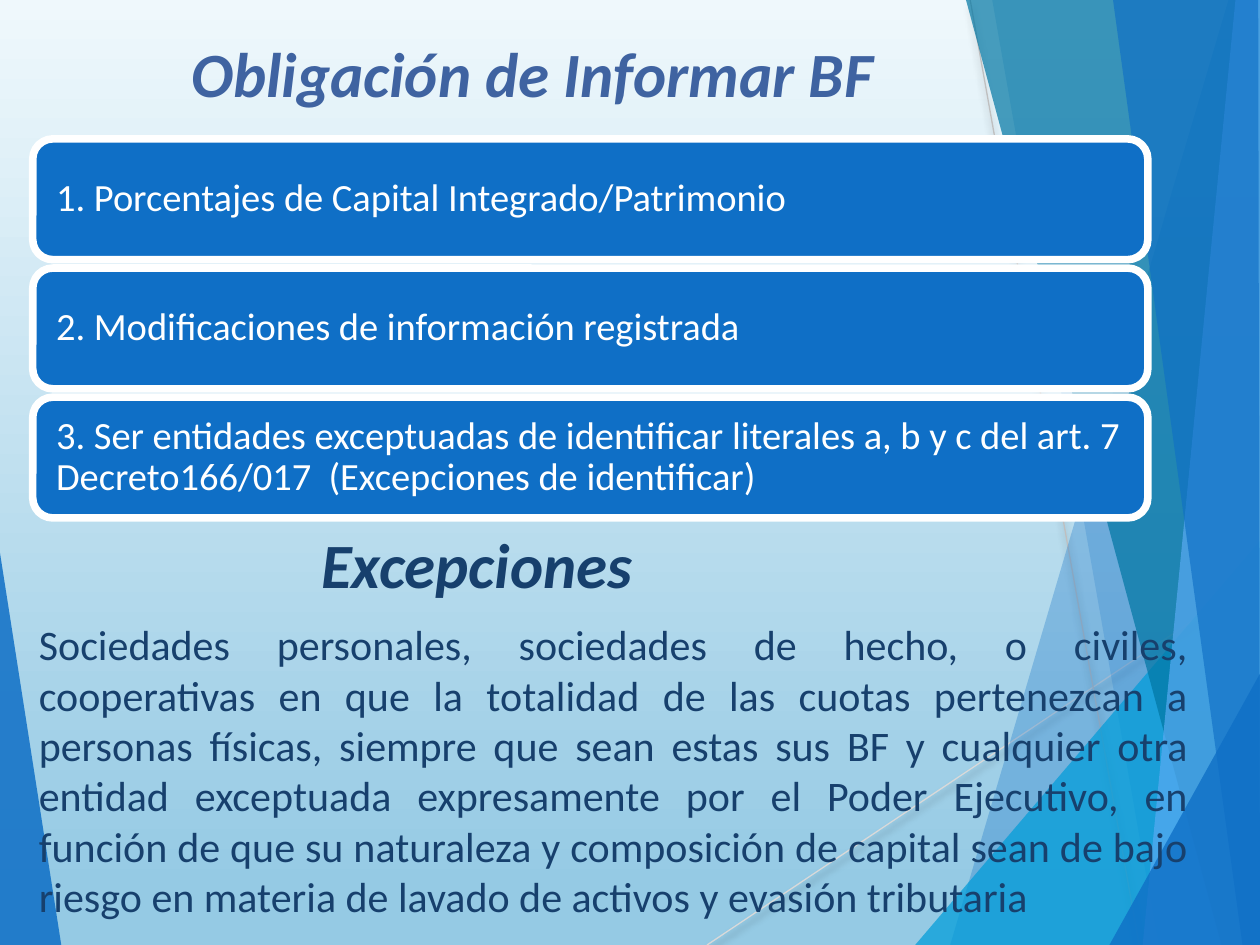
import pptx
import pptx.dml.color
import pptx.enum.shapes
import pptx.enum.text
import pptx.oxml
import pptx.oxml.ns
import pptx.util

Pt = pptx.util.Pt
RGBColor = pptx.dml.color.RGBColor
Align = pptx.enum.text.PP_ALIGN
Anchor = pptx.enum.text.MSO_ANCHOR

WIDTH, HEIGHT = 720, 540
SKY_TOP = RGBColor(0xEF, 0xF8, 0xFC)
SKY_BOTTOM = RGBColor(0x95, 0xCA, 0xE4)
BLUE = RGBColor(0x0F, 0x6F, 0xC6)
CYAN = RGBColor(0x00, 0x9D, 0xD9)
TEAL = RGBColor(0x00, 0x76, 0xA3)
LIGHT_BLUE = RGBColor(0x59, 0xAA, 0xF2)
LIGHT_GREY = RGBColor(0xD9, 0xD9, 0xD9)
GREY = RGBColor(0xBF, 0xBF, 0xBF)
WHITE = RGBColor(0xFF, 0xFF, 0xFF)
TITLE_BLUE = RGBColor(0x3F, 0x63, 0xA1)
NAVY = RGBColor(0x17, 0x40, 0x6D)

FACETS = [
    ([(0, 316), (35, HEIGHT), (0, HEIGHT)], BLUE, 85),
    ([(702, 0), (543, HEIGHT), (WIDTH, HEIGHT), (WIDTH, 0)], BLUE, 30),
    ([(567, 0), (662, HEIGHT), (WIDTH, HEIGHT), (WIDTH, 0)], BLUE, 20),
    ([(523, HEIGHT), (WIDTH, 309), (WIDTH, HEIGHT)], CYAN, 72),
    ([(552, 0), (698, HEIGHT), (WIDTH, HEIGHT), (WIDTH, 0)], TEAL, 70),
    ([(706, 0), (653, HEIGHT), (WIDTH, HEIGHT), (WIDTH, 0)], LIGHT_BLUE, 70),
    ([(636, 0), (710, HEIGHT), (WIDTH, HEIGHT), (719, 0)], BLUE, 65),
    ([(634, HEIGHT), (WIDTH, 385), (WIDTH, HEIGHT)], BLUE, 80),
]
RAYS = [((404, HEIGHT), (WIDTH, 329), LIGHT_GREY), ((554.4, 0), (651, HEIGHT), GREY)]
OBLIGATIONS = [
    "1. Porcentajes de Capital Integrado/Patrimonio",
    "2. Modificaciones de información registrada",
    "3. Ser entidades exceptuadas de identificar literales a, b y c del art. 7 "
    "Decreto166/017  (Excepciones de identificar)",
]
EXCEPTIONS = (
    "Sociedades personales, sociedades de hecho, o civiles, cooperativas en que la "
    "totalidad de las cuotas pertenezcan a personas físicas, siempre que sean estas "
    "sus BF y cualquier otra entidad exceptuada expresamente por el Poder Ejecutivo, "
    "en función de que su naturaleza y composición de capital sean de bajo riesgo en "
    "materia de lavado de activos y evasión tributaria"
)


class SlideBuilder:
    """Hold the text style and the current slide, and add elements measured in points."""

    font = "Calibri"

    def __init__(self, slide):
        self.slide = slide

    def background(self, top, bottom):
        fill = self.slide.background.fill
        fill.gradient()
        fill.gradient_angle = 270
        for stop, color, position in zip(fill.gradient_stops, (top, bottom), (0, 0.94)):
            stop.color.rgb = color
            stop.position = position

    def facet(self, points, color, opacity):
        builder = self.slide.shapes.build_freeform(*points[0], scale=float(Pt(1)))
        builder.add_line_segments(points[1:], close=True)
        shape = builder.convert_to_shape()
        shape.shadow.inherit = False
        shape.fill.solid()
        shape.fill.fore_color.rgb = color
        shape.line.fill.background()
        solid_fill = shape._element.spPr.find(pptx.oxml.ns.qn("a:solidFill"))
        solid_fill[0].append(pptx.oxml.parse_xml(
            f'<a:alpha {pptx.oxml.ns.nsdecls("a")} val="{opacity * 1000}"/>'))

    def ray(self, start, end, color):
        connector = self.slide.shapes.add_connector(
            pptx.enum.shapes.MSO_CONNECTOR.STRAIGHT, *map(Pt, start + end))
        connector.line.color.rgb = color
        connector.line.width = Pt(0.75)
        connector._element.spPr.append(pptx.oxml.parse_xml(
            f'<a:effectLst {pptx.oxml.ns.nsdecls("a")}>'
            f'<a:outerShdw blurRad="{Pt(4)}" dist="{Pt(3)}" dir="5400000" rotWithShape="0">'
            '<a:srgbClr val="000000"><a:alpha val="35000"/></a:srgbClr>'
            '</a:outerShdw></a:effectLst>'))

    def set_text(self, shape, text, size, color, align, emphasis=False):
        text_frame = shape.text_frame
        text_frame.word_wrap = True
        text_frame.text = text
        paragraph = text_frame.paragraphs[0]
        paragraph.alignment = align
        font = paragraph.runs[0].font
        font.name = self.font
        font.size = Pt(size)
        font.color.rgb = color
        font.bold = font.italic = emphasis
        return paragraph

    def card(self, left, top, width, height, text):
        shape = self.slide.shapes.add_shape(
            pptx.enum.shapes.MSO_SHAPE.ROUNDED_RECTANGLE,
            *map(Pt, (left, top, width, height)))
        shape.shadow.inherit = False
        shape.fill.solid()
        shape.fill.fore_color.rgb = BLUE
        shape.line.color.rgb = WHITE
        shape.line.width = Pt(4.33)
        text_frame = shape.text_frame
        text_frame.vertical_anchor = Anchor.MIDDLE
        text_frame.margin_left = text_frame.margin_right = Pt(10)
        self.set_text(shape, text, 22, WHITE, Align.LEFT).line_spacing = 0.9

    def text_box(self, left, top, width, height):
        return self.slide.shapes.add_textbox(*map(Pt, (left, top, width, height)))

    def heading(self, left, top, text, color):
        shape = self.text_box(left, top, 510.5, 51)
        self.set_text(shape, text, 36, color, Align.CENTER, True)

    def body(self, left, top, width, height, indent, text):
        shape = self.text_box(left, top, width, height)
        shape.text_frame.margin_left = Pt(indent)
        self.set_text(shape, text, 24, NAVY, Align.JUSTIFY)


def main():
    presentation = pptx.Presentation()
    presentation.slide_width, presentation.slide_height = Pt(WIDTH), Pt(HEIGHT)
    builder = SlideBuilder(presentation.slides.add_slide(presentation.slide_layouts[6]))
    builder.background(SKY_TOP, SKY_BOTTOM)
    builder.facet(*FACETS[0])
    for ray in RAYS:
        builder.ray(*ray)
    for facet in FACETS[1:]:
        builder.facet(*facet)
    for index, obligation in enumerate(OBLIGATIONS):
        builder.card(18.7, 79.4 + 73.8 * index, 637.2, 69, obligation)
    builder.heading(49, 16, "Obligación de Informar BF", TITLE_BLUE)
    builder.heading(17.3, 296.6, "Excepciones", NAVY)
    builder.body(-21, 350, 707, 181.5, 43.2, EXCEPTIONS)
    presentation.save("out.pptx")


if __name__ == "__main__":
    main()
